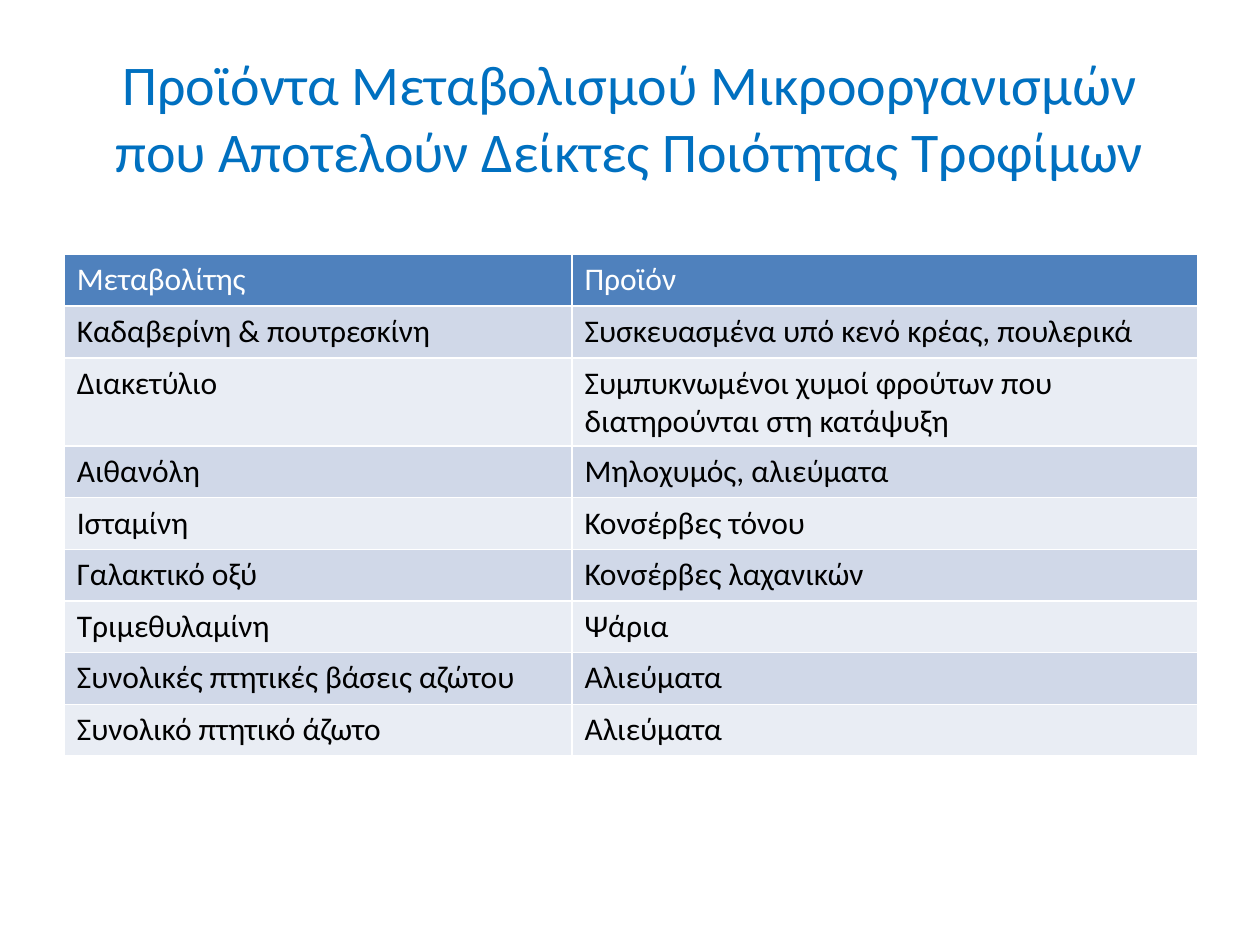
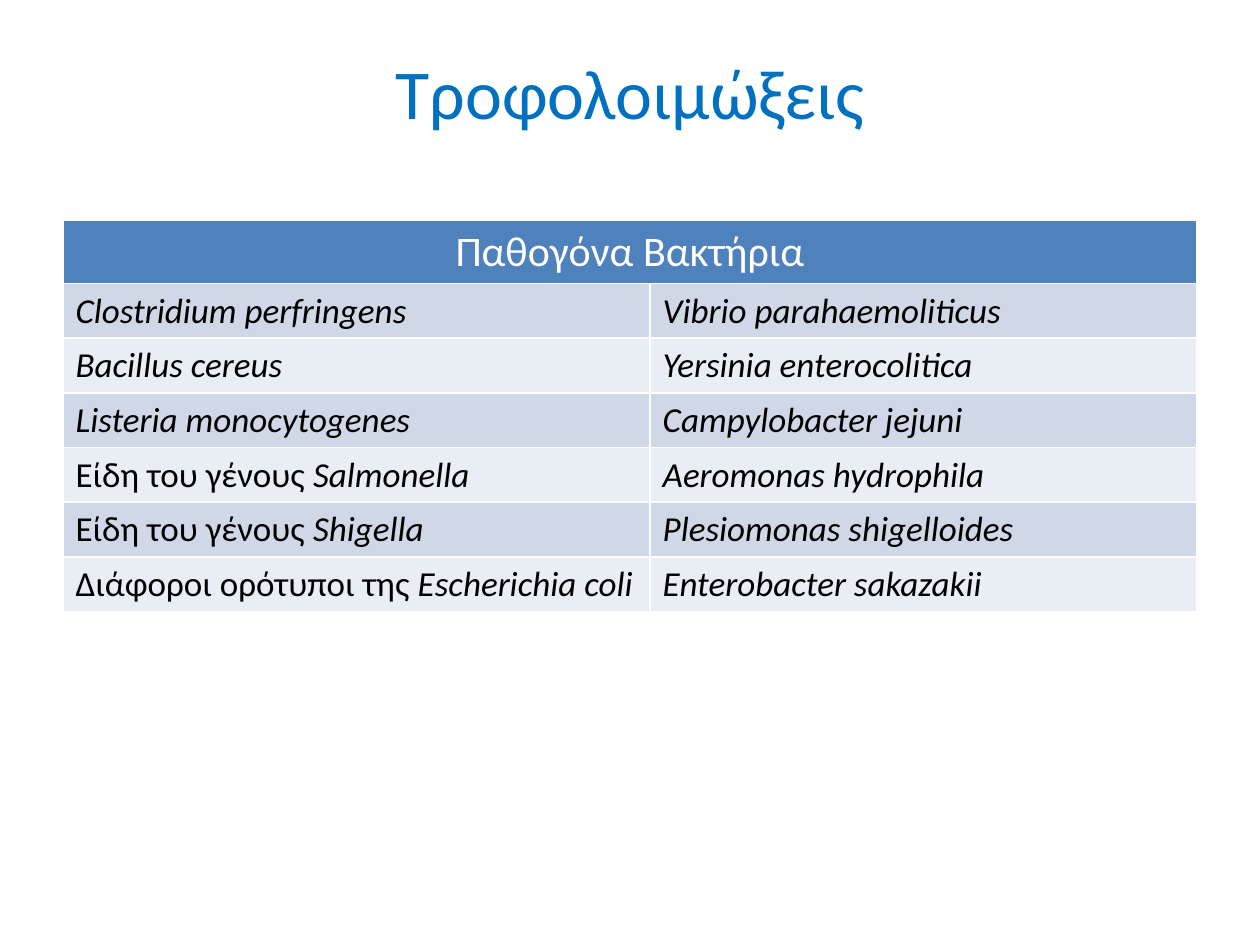
from dataclasses import dataclass

from pptx import Presentation
from pptx.dml.color import RGBColor
from pptx.enum.text import MSO_ANCHOR, PP_ALIGN
from pptx.util import Inches, Pt

METABOLITES = {
    "title": "Προϊόντα Μεταβολισμού Μικροοργανισμών που Αποτελούν Δείκτες Ποιότητας Τροφίμων",
    "title_size": 32,
    "title_height": 1.25,
    "table_at": (0.51, 2.02),
    "columns": (4.03, 4.97),
    "header": ("Μεταβολίτης", "Προϊόν"),
    "header_size": 18,
    "body_size": 18,
    "rows": [
        ("Καδαβερίνη & πουτρεσκίνη", "Συσκευασμένα υπό κενό κρέας, πουλερικά"),
        ("Διακετύλιο", "Συμπυκνωμένοι χυμοί φρούτων που διατηρούνται στη κατάψυξη"),
        ("Αιθανόλη", "Μηλοχυμός, αλιεύματα"),
        ("Ισταμίνη", "Κονσέρβες τόνου"),
        ("Γαλακτικό οξύ", "Κονσέρβες λαχανικών"),
        ("Τριμεθυλαμίνη", "Ψάρια"),
        ("Συνολικές πτητικές βάσεις αζώτου", "Αλιεύματα"),
        ("Συνολικό πτητικό άζωτο", "Αλιεύματα"),
    ],
    "species": (),
}

PATHOGENS = {
    "title": "Τροφολοιμώξεις",
    "title_size": 40,
    "title_height": 0.85,
    "table_at": (0.5, 1.75),
    "columns": (4.66, 4.34),
    "header": ("Παθογόνα Βακτήρια",),
    "header_size": 24,
    "body_size": 20,
    "rows": [
        ("Clostridium perfringens", "Vibrio parahaemoliticus"),
        ("Bacillus cereus", "Yersinia enterocolitica"),
        ("Listeria monocytogenes", "Campylobacter jejuni"),
        ("Είδη του γένους Salmonella", "Aeromonas hydrophila"),
        ("Είδη του γένους Shigella", "Plesiomonas shigelloides"),
        ("Διάφοροι ορότυποι της Escherichia coli", "Enterobacter sakazakii"),
    ],
    "species": (
        "Clostridium perfringens", "Vibrio parahaemoliticus",
        "Bacillus cereus", "Yersinia enterocolitica",
        "Listeria monocytogenes", "Campylobacter jejuni",
        "Salmonella", "Aeromonas hydrophila",
        "Shigella", "Plesiomonas shigelloides",
        "Escherichia coli", "Enterobacter sakazakii",
    ),
}


@dataclass(frozen=True)
class Theme:
    font: str = "Calibri"
    title: str = "0070C0"
    header_fill: str = "4F81BD"
    header_text: str = "FFFFFF"
    body_text: str = "000000"
    bands: tuple = ("D0D8E8", "E9EDF4")
    title_left: float = 0.5
    title_top: float = 0.3
    title_width: float = 9
    row_height: float = 0.41


THEME = Theme()


def style_runs(paragraph, size, color):
    for run in paragraph.runs:
        run.font.name = THEME.font
        run.font.size = Pt(size)
        run.font.bold = False
        run.font.color.rgb = RGBColor.from_string(color)


def fill_cell(cell, color):
    cell.fill.solid()
    cell.fill.fore_color.rgb = RGBColor.from_string(color)


def write_entry(paragraph, entry, species):
    name = next((s for s in species if entry.endswith(s)), "")
    for part, italic in ((entry.removesuffix(name), False), (name, True)):
        if part:
            run = paragraph.add_run()
            run.text = part
            run.font.italic = italic


def add_title(slide, topic):
    title = slide.shapes.add_textbox(
        Inches(THEME.title_left), Inches(THEME.title_top),
        Inches(THEME.title_width), Inches(topic["title_height"]))
    frame = title.text_frame
    frame.word_wrap = True
    frame.vertical_anchor = MSO_ANCHOR.MIDDLE
    frame.text = topic["title"]
    frame.paragraphs[0].alignment = PP_ALIGN.CENTER
    style_runs(frame.paragraphs[0], topic["title_size"], THEME.title)


def add_grid(slide, topic):
    left, top = topic["table_at"]
    widths = topic["columns"]
    row_count = len(topic["rows"]) + 1
    grid = slide.shapes.add_table(
        row_count, len(widths), Inches(left), Inches(top),
        Inches(sum(widths)), Inches(row_count * THEME.row_height)).table
    for column, width in zip(grid.columns, widths):
        column.width = Inches(width)

    for cell in grid.rows[0].cells:
        fill_cell(cell, THEME.header_fill)
    for index, heading in enumerate(topic["header"]):
        cell = grid.cell(0, index)
        cell.text_frame.text = heading
        style_runs(cell.text_frame.paragraphs[0], topic["header_size"], THEME.header_text)
    if len(topic["header"]) == 1:
        grid.cell(0, 0).merge(grid.cell(0, len(widths) - 1))
        grid.cell(0, 0).text_frame.paragraphs[0].alignment = PP_ALIGN.CENTER

    for index, entries in enumerate(topic["rows"]):
        for cell, entry in zip(grid.rows[index + 1].cells, entries):
            fill_cell(cell, THEME.bands[index % len(THEME.bands)])
            paragraph = cell.text_frame.paragraphs[0]
            write_entry(paragraph, entry, topic["species"])
            style_runs(paragraph, topic["body_size"], THEME.body_text)


def main():
    deck = Presentation()
    deck.slide_width, deck.slide_height = Inches(10), Inches(7.5)
    for topic in (METABOLITES, PATHOGENS):
        slide = deck.slides.add_slide(deck.slide_layouts[6])
        add_title(slide, topic)
        add_grid(slide, topic)
    deck.save("out.pptx")


if __name__ == "__main__":
    main()
